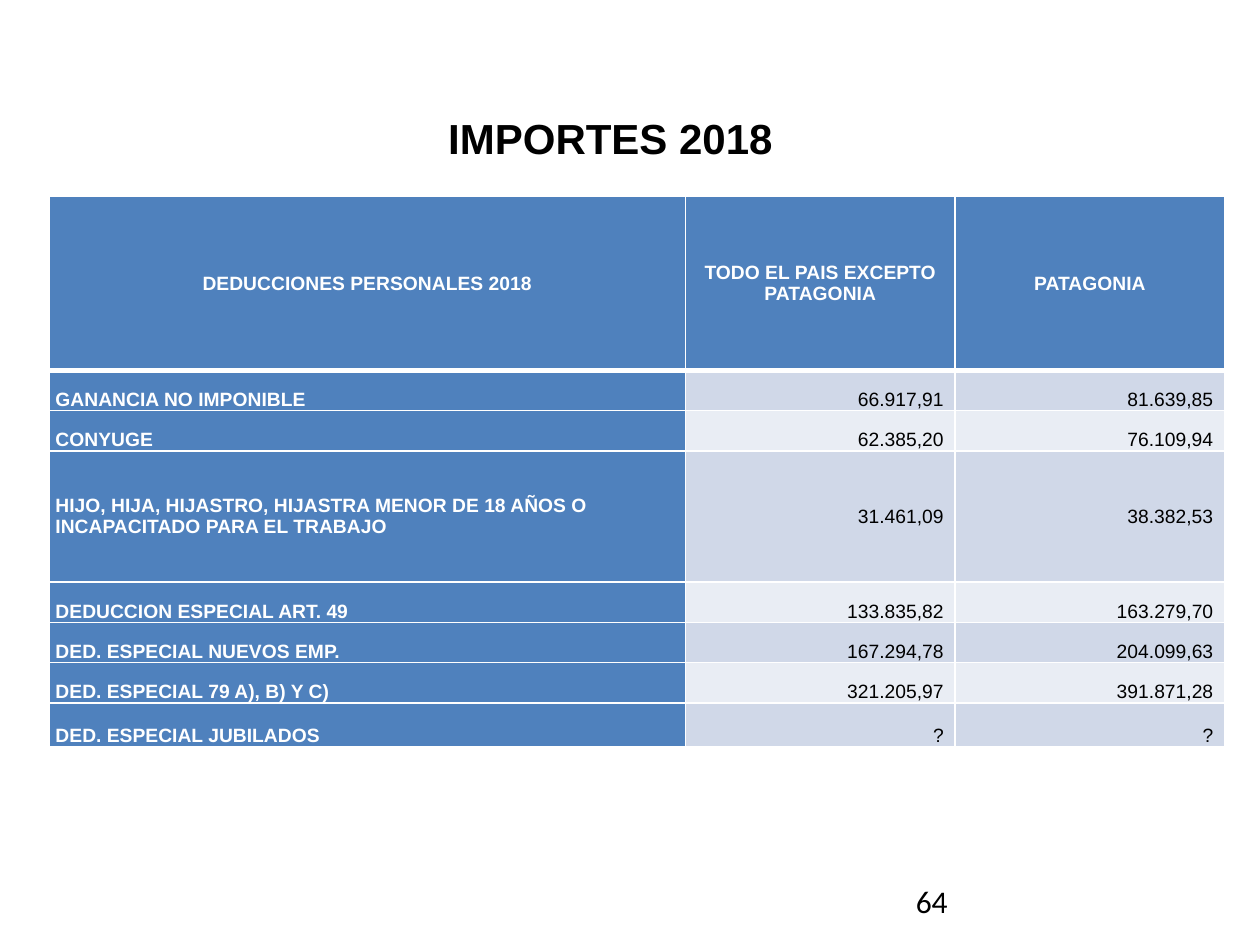
from dataclasses import dataclass

from lxml.etree import SubElement
from pptx import Presentation
from pptx.dml.color import RGBColor
from pptx.enum.text import MSO_ANCHOR, PP_ALIGN
from pptx.oxml.ns import qn
from pptx.util import Inches, Pt


@dataclass(frozen=True)
class Theme:
    ink: str = "000000"
    paper: str = "FFFFFF"
    accent: str = "4F81BD"
    bands: tuple = ("D0D8E8", "E9EDF4")
    heading_font: str = "Arial"
    number_font: str = "Calibri"
    title_size: int = 24
    page_size: int = 18
    table_size: int = 11
    rule: int = 1
    header_rule: int = 3


HEADINGS = ("DEDUCCIONES PERSONALES 2018", "TODO EL PAIS EXCEPTO PATAGONIA", "PATAGONIA")
# Concept, amount for the country, amount for Patagonia, row height in grid rows
DEDUCTIONS = (
    ("GANANCIA NO IMPONIBLE", "66.917,91", "81.639,85", 3.2),
    ("CONYUGE", "62.385,20", "76.109,94", 3.2),
    ("HIJO, HIJA, HIJASTRO, HIJASTRA MENOR DE 18 AÑOS O INCAPACITADO PARA EL TRABAJO",
     "31.461,09", "38.382,53", 10.4),
    ("DEDUCCION ESPECIAL ART. 49", "133.835,82", "163.279,70", 3.2),
    ("DED. ESPECIAL NUEVOS EMP.", "167.294,78", "204.099,63", 3.2),
    ("DED. ESPECIAL 79 A), B) Y C)", "321.205,97", "391.871,28", 3.2),
    ("DED. ESPECIAL JUBILADOS", "?", "?", 3.5),
)
HEADER_HEIGHT = 13.8
COLUMN_WIDTHS = (50.5, 21.4, 21.4)
TALL_ROW = 5


def write(frame, text, *, size, font, color, bold=False, align=PP_ALIGN.LEFT):
    frame.word_wrap = True
    paragraph = frame.paragraphs[0]
    paragraph.alignment = align
    run = paragraph.add_run()
    run.text = text
    run.font.size = Pt(size)
    run.font.name = font
    run.font.bold = bold
    run.font.color.rgb = RGBColor.from_string(color)


class SlideBuilder:
    """Places elements on a grid of 100 columns by 75 rows."""

    def __init__(self, deck, theme):
        self.theme = theme
        self.column = deck.slide_width / 100
        self.row = deck.slide_height / 75
        self.slide = deck.slides.add_slide(deck.slide_layouts[6])

    def box(self, left, top, width, height):
        return (round(left * self.column), round(top * self.row),
                round(width * self.column), round(height * self.row))

    def text(self, text, area, anchor=MSO_ANCHOR.TOP, **style):
        frame = self.slide.shapes.add_textbox(*self.box(*area)).text_frame
        frame.vertical_anchor = anchor
        write(frame, text, color=self.theme.ink, **style)

    def table(self, left, top, widths, heights):
        area = self.box(left, top, sum(widths), sum(heights))
        grid = self.slide.shapes.add_table(len(heights), len(widths), *area).table
        grid.first_row = grid.horz_banding = False
        for column, width in zip(grid.columns, widths):
            column.width = round(width * self.column)
        for row, height in zip(grid.rows, heights):
            row.height = round(height * self.row)
        return grid

    def cell(self, cell, text, *, fill, anchor, rules, right_inset=0.05, **style):
        cell.margin_left, cell.margin_right = Inches(0.05), Inches(right_inset)
        cell.margin_top = cell.margin_bottom = 0
        cell.vertical_anchor = anchor
        self.borders(cell, rules)
        cell.fill.solid()
        cell.fill.fore_color.rgb = RGBColor.from_string(fill)
        write(cell.text_frame, text, size=self.theme.table_size,
              font=self.theme.heading_font, **style)

    def borders(self, cell, rules):
        properties = cell._tc.get_or_add_tcPr()
        for side, width in zip(("lnL", "lnR", "lnT", "lnB"), rules):
            line = SubElement(properties, qn(f"a:{side}"), w=str(Pt(width)))
            solid = SubElement(line, qn("a:solidFill"))
            SubElement(solid, qn("a:srgbClr"), val=self.theme.paper)


def main():
    theme = Theme()
    deck = Presentation()
    deck.slide_width, deck.slide_height = Inches(10), Inches(7.5)
    builder = SlideBuilder(deck, theme)

    # Title and page number
    builder.text("IMPORTES 2018", (0, 6.2, 96.9, 9.4), MSO_ANCHOR.MIDDLE, bold=True,
                 size=theme.title_size, font=theme.heading_font, align=PP_ALIGN.CENTER)
    builder.text("64", (71.7, 69.5, 23.3, 4), size=theme.page_size, font=theme.number_font)

    # Table header
    heights = [HEADER_HEIGHT] + [height for *_, height in DEDUCTIONS]
    grid = builder.table(3.9, 15.6, COLUMN_WIDTHS, heights)
    thin, thick = theme.rule, theme.header_rule
    for column, heading in enumerate(HEADINGS):
        builder.cell(grid.cell(0, column), heading, fill=theme.accent, color=theme.paper,
                     bold=True, align=PP_ALIGN.CENTER, anchor=MSO_ANCHOR.MIDDLE,
                     rules=(thin, thin, thin, thick))

    # Deductions, with alternating bands behind the amounts
    for index, (concept, *amounts, height) in enumerate(DEDUCTIONS):
        row = index + 1
        shared = {
            "anchor": MSO_ANCHOR.MIDDLE if height > TALL_ROW else MSO_ANCHOR.BOTTOM,
            "rules": (thin, thin, thick if index == 0 else thin, thin),
        }
        builder.cell(grid.cell(row, 0), concept, fill=theme.accent, color=theme.paper,
                     bold=True, **shared)
        for column, amount in enumerate(amounts, start=1):
            builder.cell(grid.cell(row, column), amount, fill=theme.bands[index % 2],
                         color=theme.ink, align=PP_ALIGN.RIGHT, right_inset=0.09, **shared)

    deck.save("out.pptx")


if __name__ == "__main__":
    main()
